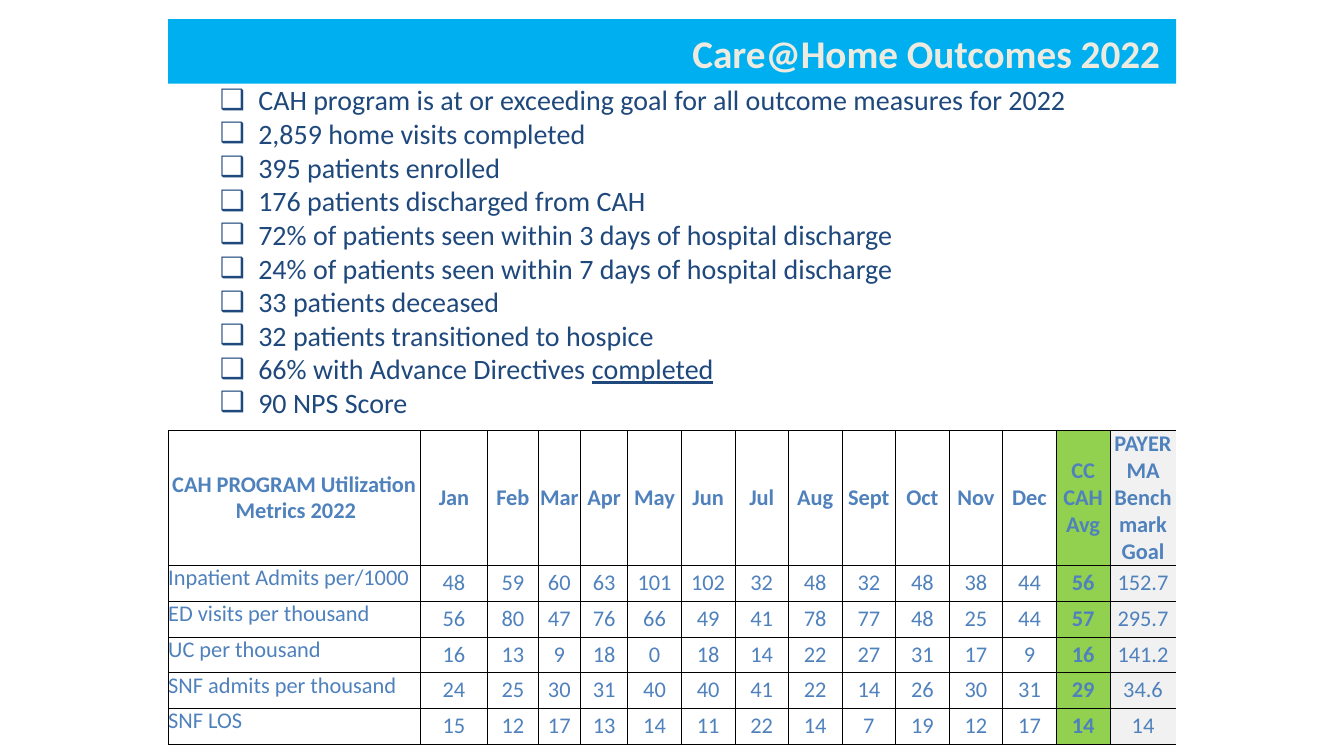
import pptx
import pptx.util
import pptx.dml.color
import pptx.enum.shapes
import pptx.enum.text
import pptx.oxml.ns
from lxml import etree
from pptx.util import Cm, Pt

HEADING = "Care@Home Outcomes 2022"
OUTCOMES = [
    ("CAH program is at or exceeding goal for all outcome measures for 2022", ""),
    ("2,859 home visits completed", ""),
    ("395 patients enrolled", ""),
    ("176 patients discharged from CAH", ""),
    ("72% of patients seen within 3 days of hospital discharge", ""),
    ("24% of patients seen within 7 days of hospital discharge", ""),
    ("33 patients deceased", ""),
    ("32 patients transitioned to hospice", ""),
    ("66% with Advance Directives ", "completed"),
    ("90 NPS Score", ""),
]
METRICS = [
    ("CAH PROGRAM Utilization Metrics 2022", "Jan", "Feb", "Mar", "Apr", "May", "Jun", "Jul",
     "Aug", "Sept", "Oct", "Nov", "Dec", "CC CAH Avg", "PAYER MA Bench mark Goal"),
    ("Inpatient Admits per/1000", 48, 59, 60, 63, 101, 102, 32, 48, 32, 48, 38, 44, 56, 152.7),
    ("ED visits per thousand", 56, 80, 47, 76, 66, 49, 41, 78, 77, 48, 25, 44, 57, 295.7),
    ("UC per thousand", 16, 13, 9, 18, 0, 18, 14, 22, 27, 31, 17, 9, 16, 141.2),
    ("SNF admits per thousand", 24, 25, 30, 31, 40, 40, 41, 22, 14, 26, 30, 31, 29, 34.6),
    ("SNF LOS", 15, 12, 17, 13, 14, 11, 22, 14, 7, 19, 12, 17, 14, 14),
]
COLUMN_WIDTHS = [6.35, 1.7, 1.27, 1.07, 1.19] + [1.35] * 9 + [1.67]
ROW_HEIGHTS = [3.4] + [0.9] * 5
AVERAGE, BENCHMARK = 13, 14
COLUMN_FILLS = {AVERAGE: "92D050", BENCHMARK: "F1F1F1"}
LEFT, WIDTH = 4.24, 25.4
ALIGN = pptx.enum.text.PP_ALIGN
ANCHOR = pptx.enum.text.MSO_ANCHOR


def paint(color_format, hex_color):
    color_format.rgb = pptx.dml.color.RGBColor.from_string(hex_color)


def style(paragraph, size, hex_color, bold=False):
    for run in paragraph.runs:
        run.font.name = "Calibri"
        run.font.size = Pt(size)
        run.font.bold = bold
        paint(run.font.color, hex_color)


def indent(paragraph, left, hanging):
    properties = paragraph._p.get_or_add_pPr()
    properties.set("marL", str(Cm(left)))
    properties.set("indent", str(-Cm(hanging)))
    return properties


def place(placeholder, left, top, width, height):
    placeholder.left, placeholder.top = Cm(left), Cm(top)
    placeholder.width, placeholder.height = Cm(width), Cm(height)
    frame = placeholder.text_frame
    frame.margin_left = frame.margin_right = frame.margin_bottom = 0
    frame.margin_top = Cm(0.03)
    frame.vertical_anchor = ANCHOR.TOP
    frame.auto_size = pptx.enum.text.MSO_AUTO_SIZE.NONE
    return frame


def border(cell, open_sides):
    properties = cell._tc.get_or_add_tcPr()
    for side in ("lnL", "lnR", "lnT", "lnB"):
        line = etree.SubElement(properties, pptx.oxml.ns.qn(f"a:{side}"), w=str(Pt(0.5)))
        if side in open_sides:
            etree.SubElement(line, pptx.oxml.ns.qn("a:noFill"))
        else:
            fill = etree.SubElement(line, pptx.oxml.ns.qn("a:solidFill"))
            etree.SubElement(fill, pptx.oxml.ns.qn("a:srgbClr"), val="000000")


def add_banner(slide):
    banner = slide.shapes.add_shape(pptx.enum.shapes.MSO_SHAPE.RECTANGLE,
                                    Cm(LEFT), Cm(0.48), Cm(WIDTH), Cm(1.63))
    banner.shadow.inherit = False
    banner.fill.solid()
    paint(banner.fill.fore_color, "00AFEF")
    banner.line.fill.background()
    slide.shapes.title.element.addprevious(banner.element)
    heading = place(slide.shapes.title, 17.45, 0.71, 11.86, 1.24)
    heading.text = HEADING
    heading.paragraphs[0].alignment = ALIGN.LEFT
    style(heading.paragraphs[0], 28, "EDEBE0", True)


def add_outcomes(slide):
    outcomes = place(slide.placeholders[1], 5.51, 2.06, 21.36, 8.53)
    outcomes.text = "\n".join(plain for plain, underlined in OUTCOMES)
    for paragraph, (plain, underlined) in zip(outcomes.paragraphs, OUTCOMES):
        paragraph.space_before = Pt(0)
        if underlined:
            ending = paragraph.add_run()
            ending.text = underlined
            ending.font.underline = True
        style(paragraph, 20, "1F487C")
        properties = indent(paragraph, 1, 0.97)
        etree.SubElement(properties, pptx.oxml.ns.qn("a:buChar"), char="❑")


def add_metrics(slide):
    metrics = slide.shapes.add_table(len(METRICS), len(COLUMN_WIDTHS), Cm(LEFT), Cm(10.85),
                                     Cm(WIDTH), Cm(sum(ROW_HEIGHTS))).table
    metrics.first_row = metrics.horz_banding = False
    for column, width in zip(metrics.columns, COLUMN_WIDTHS):
        column.width = Cm(width)
    for row, height in zip(metrics.rows, ROW_HEIGHTS):
        row.height = Cm(height)
    for r, values in enumerate(METRICS):
        for c, value in enumerate(values):
            cell = metrics.cell(r, c)
            is_header, is_label = r == 0, c == 0
            cell.margin_left = cell.margin_right = cell.margin_top = cell.margin_bottom = 0
            cell.vertical_anchor = ANCHOR.TOP if is_label and not is_header else ANCHOR.MIDDLE
            border(cell, ("lnR",) if c == BENCHMARK else ())
            if c in COLUMN_FILLS:
                cell.fill.solid()
                paint(cell.fill.fore_color, COLUMN_FILLS[c])
            else:
                cell.fill.background()
            cell.text_frame.text = str(value)
            paragraph = cell.text_frame.paragraphs[0]
            paragraph.alignment = ALIGN.LEFT if is_label else ALIGN.CENTER
            paragraph.line_spacing = Pt(18.9 if is_label and not is_header else 19.2)
            if is_header and is_label:
                indent(paragraph, 1.7, 1.6)
            style(paragraph, 16, "4F81BC", is_header or c == AVERAGE)


def main():
    presentation = pptx.Presentation()
    presentation.slide_width, presentation.slide_height = Cm(33.87), Cm(19.05)
    slide = presentation.slides.add_slide(presentation.slide_layouts[1])
    add_banner(slide)
    add_outcomes(slide)
    add_metrics(slide)
    presentation.save("out.pptx")


if __name__ == "__main__":
    main()
